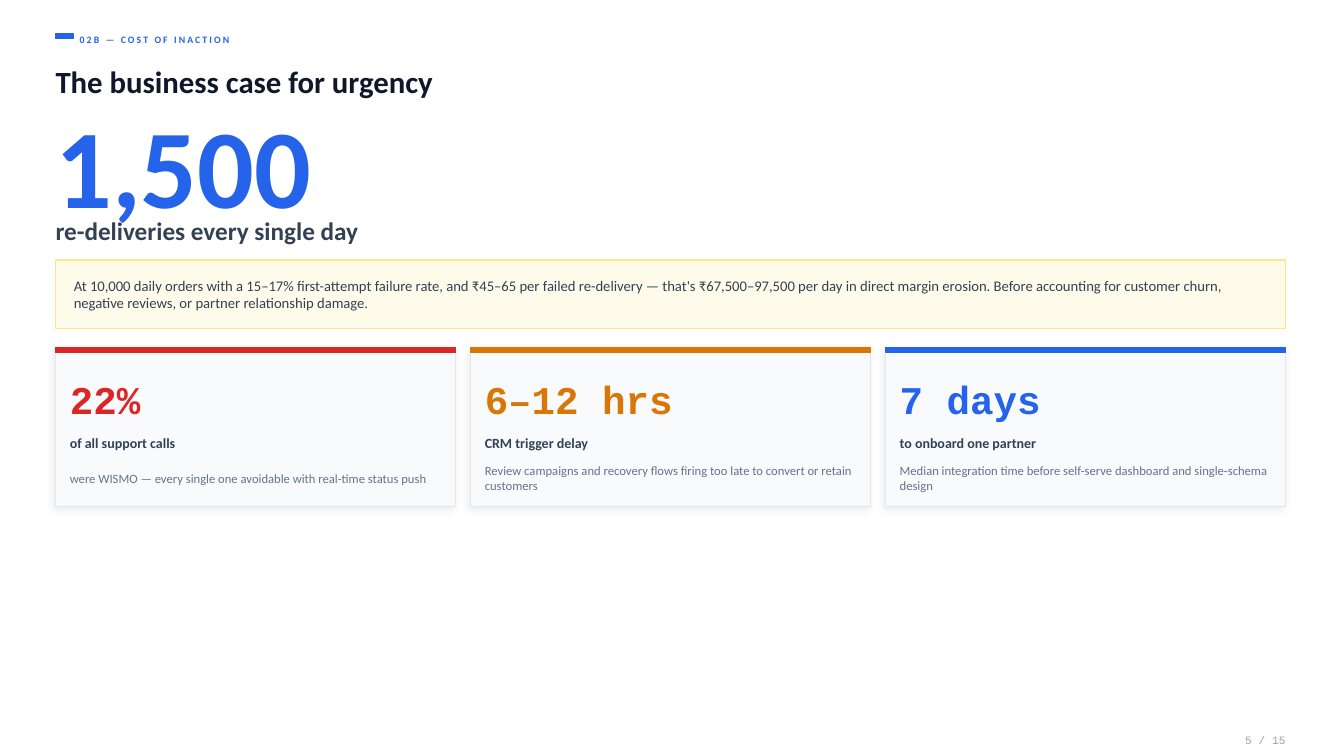
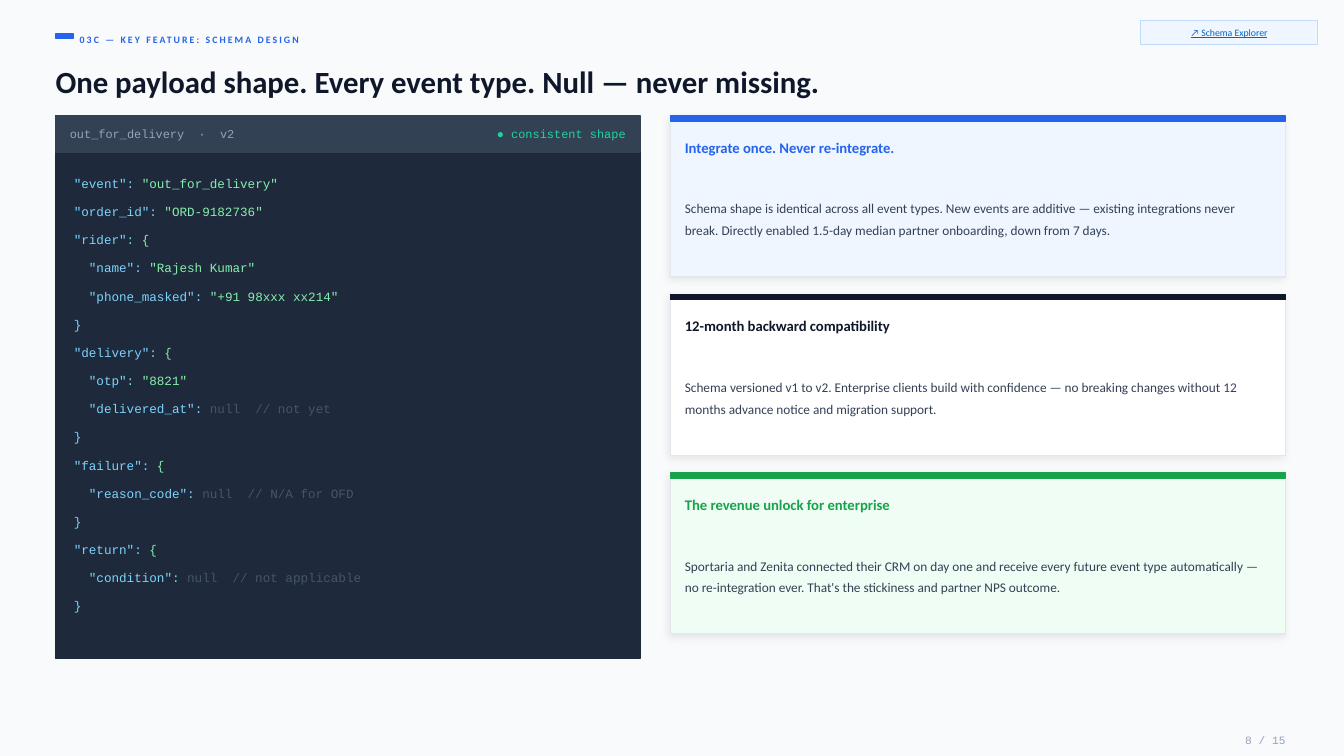
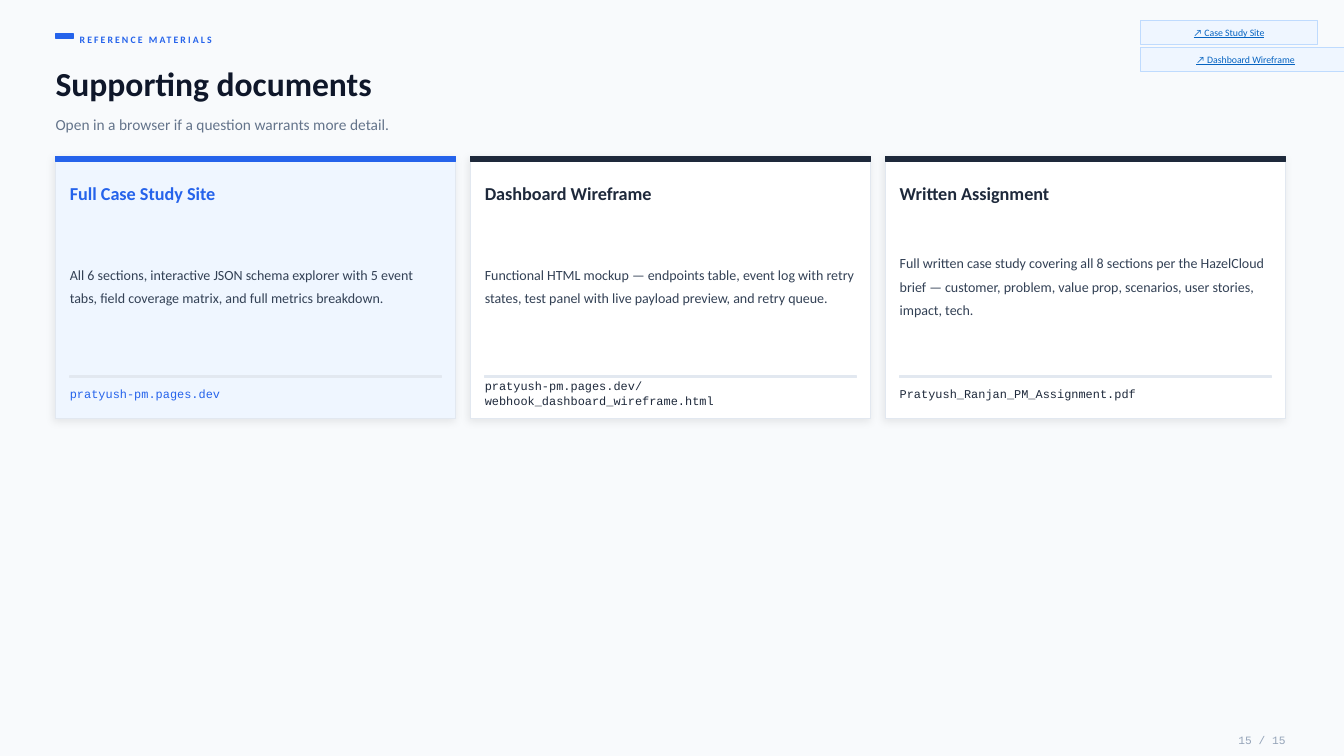
from lxml import etree
from pptx import Presentation
from pptx.dml.color import RGBColor
from pptx.enum import shapes, text
from pptx.oxml import ns
from pptx.util import Cm, Pt

SANS, MONO = "Calibri", "Courier New"
BLUE, RED, AMBER, GREEN = "2563EB", "DC2626", "D97706", "16A34A"
INK, NAVY, SLATE, GREY, MUTED = "0F172A", "1E293B", "334155", "64748B", "94A3B8"
PALE, SKY, WHITE, EDGE = "F8FAFC", "EFF6FF", "FFFFFF", "E2E8F0"
KEY, VALUE, DIM = "7DD3FC", "86EFAC", "475569"
LEFT, WIDE, GAP, PAD = 1.4, 31, 0.37, 0.36
TOTAL = 15

STATS = [
    (RED, "22%", "of all support calls",
     "were WISMO — every single one avoidable with real-time status push"),
    (AMBER, "6–12 hrs", "CRM trigger delay",
     "Review campaigns and recovery flows firing too late to convert or retain customers"),
    (BLUE, "7 days", "to onboard one partner",
     "Median integration time before self-serve dashboard and single-schema design"),
]
NOTE = ("At 10,000 daily orders with a 15–17% first-attempt failure rate, and ₹45–65 per failed "
        "re-delivery — that's ₹67,500–97,500 per day in direct margin erosion. Before accounting "
        "for customer churn, negative reviews, or partner relationship damage.")
CODE = [
    ('"event": ', '"out_for_delivery"'),
    ('"order_id": ', '"ORD-9182736"'),
    ('"rider": ', "{"),
    ('  "name": ', '"Rajesh Kumar"'),
    ('  "phone_masked": ', '"+91 98xxx xx214"'),
    ("}", ""),
    ('"delivery": ', "{"),
    ('  "otp": ', '"8821"'),
    ('  "delivered_at": ', "null  // not yet"),
    ("}", ""),
    ('"failure": ', "{"),
    ('  "reason_code": ', "null  // N/A for OFD"),
    ("}", ""),
    ('"return": ', "{"),
    ('  "condition": ', "null  // not applicable"),
    ("}", ""),
]
GAINS = [
    (SKY, BLUE, "Integrate once. Never re-integrate.",
     "Schema shape is identical across all event types. New events are additive — existing "
     "integrations never break. Directly enabled 1.5-day median partner onboarding, down from 7 days."),
    (WHITE, INK, "12-month backward compatibility",
     "Schema versioned v1 to v2. Enterprise clients build with confidence — no breaking changes "
     "without 12 months advance notice and migration support."),
    ("F0FDF4", GREEN, "The revenue unlock for enterprise",
     "Sportaria and Zenita connected their CRM on day one and receive every future event type "
     "automatically — no re-integration ever. That's the stickiness and partner NPS outcome."),
]
DOCS = [
    (SKY, BLUE, "Full Case Study Site",
     "All 6 sections, interactive JSON schema explorer with 5 event tabs, field coverage matrix, "
     "and full metrics breakdown.",
     "pratyush-pm.pages.dev"),
    (WHITE, NAVY, "Dashboard Wireframe",
     "Functional HTML mockup — endpoints table, event log with retry states, test panel with live "
     "payload preview, and retry queue.",
     "pratyush-pm.pages.dev/webhook_dashboard_wireframe.html"),
    (WHITE, NAVY, "Written Assignment",
     "Full written case study covering all 8 sections per the HazelCloud brief — customer, problem, "
     "value prop, scenarios, user stories, impact, tech.",
     "Pratyush_Ranjan_PM_Assignment.pdf"),
]


def rgb(code):
    return RGBColor.from_string(code)


def write(shape, runs, size, font=SANS, bold=False, align="LEFT", lead=None,
          inset=(0, 0), track=None, under=None):
    frame = shape.text_frame
    frame.word_wrap = True
    frame.auto_size = text.MSO_AUTO_SIZE.NONE
    frame.vertical_anchor = text.MSO_ANCHOR.MIDDLE
    frame.margin_left = frame.margin_right = Cm(inset[0])
    frame.margin_top = frame.margin_bottom = Cm(inset[1])
    para = frame.paragraphs[0]
    para.alignment = text.PP_ALIGN[align]
    if lead:
        para.line_spacing = lead
    for words, color in runs:
        run = para.add_run()
        run.text = words
        run.font.name, run.font.size = font, Pt(size)
        run.font.bold, run.font.underline = bold, under
        run.font.color.rgb = rgb(color)
        if track:
            run.font._element.set("spc", str(track))


def label(slide, x, y, w, h, words, size, color, **style):
    box = slide.shapes.add_textbox(Cm(x), Cm(y), Cm(w), Cm(h))
    write(box, [(words, color)], size, **style)


def block(slide, x, y, w, h, fill, line=None, weight=1):
    shape = slide.shapes.add_shape(shapes.MSO_SHAPE.RECTANGLE, Cm(x), Cm(y), Cm(w), Cm(h))
    shape.shadow.inherit = False
    shape.fill.solid()
    shape.fill.fore_color.rgb = rgb(fill)
    shape.line.color.rgb = rgb(line or fill)
    shape.line.width = Pt(weight)
    return shape


def shade(shape):
    effects = shape._element.spPr.find(ns.qn("a:effectLst"))
    outer = etree.SubElement(effects, ns.qn("a:outerShdw"), blurRad="76200", dist="25400",
                             dir="8100000", algn="bl", rotWithShape="0")
    color = etree.SubElement(outer, ns.qn("a:srgbClr"), val="000000")
    etree.SubElement(color, ns.qn("a:alpha"), val="8000")


def card(slide, x, y, w, h, fill, accent, parts):
    shade(block(slide, x, y, w, h, fill, EDGE))
    block(slide, x, y, w, 0.13, accent)
    for down, high, words, size, color, style in parts:
        label(slide, x + PAD, y + down, w - 2 * PAD, high, words, size, color, **style)


def columns(count):
    w = (WIDE - GAP * (count - 1)) / count
    return [(LEFT + i * (w + GAP), w) for i in range(count)]


def start(deck, page, tag, title, back=PALE, size=22, high=1.17):
    slide = deck.slides.add_slide(deck.slide_layouts[5])
    slide.background.fill.solid()
    slide.background.fill.fore_color.rgb = rgb(back)
    block(slide, LEFT, 0.86, 0.46, 0.1, BLUE)
    label(slide, 2.01, 0.76, 30.38, 0.46, tag, 7, BLUE, bold=True, track=150)
    head = slide.shapes.title
    head.left, head.top, head.width, head.height = Cm(LEFT), Cm(1.47), Cm(WIDE), Cm(high)
    write(head, [(title, INK)], size, bold=True)
    label(slide, LEFT + WIDE - 1.52, 18.41, 1.52, 0.46, f"{page} / {TOTAL}", 8, MUTED,
          font=MONO, align="RIGHT")
    return slide


def chips(slide, items):
    for i, (words, w) in enumerate(items):
        chip = block(slide, 28.75, 0.51 + 0.69 * i, w, 0.61, SKY, "BFDBFE", 0.75)
        write(chip, [(words, "0563C1")], 7, align="CENTER", inset=(0.25, 0.13), under=True)


def urgency(deck):
    slide = start(deck, 5, "02B — COST OF INACTION", "The business case for urgency", WHITE)
    label(slide, LEFT, 2.74, 12.7, 2.79, "1,500", 80, BLUE, bold=True)
    label(slide, LEFT, 5.33, 15.24, 0.97, "re-deliveries every single day", 18, SLATE, bold=True)
    note = block(slide, LEFT, 6.55, WIDE, 1.73, "FFFBEB", "FDE68A")
    write(note, [(NOTE, SLATE)], 10.5, inset=(0.46, 0.2))
    for (x, w), (color, stat, name, more) in zip(columns(3), STATS):
        card(slide, x, 8.76, w, 4.01, PALE, color, [
            (0.56, 1.47, stat, 28, color, dict(font=MONO, bold=True)),
            (2.09, 0.61, name, 10, SLATE, dict(bold=True)),
            (2.75, 1.07, more, 9, GREY, {}),
        ])


def schema(deck):
    slide = start(deck, 8, "03C — KEY FEATURE: SCHEMA DESIGN",
                  "One payload shape. Every event type. Null — never missing.")
    top, wide = 2.92, 14.73
    block(slide, LEFT, top, wide, 13.67, NAVY)
    block(slide, LEFT, top, wide, 0.91, SLATE)
    label(slide, LEFT + PAD, 3.1, 7.11, 0.56, "out_for_delivery  ·  v2", 8.5, MUTED, font=MONO)
    label(slide, LEFT + wide - PAD - 3.71, 3.1, 3.71, 0.56, "● consistent shape", 8.5, "22D3A0",
          font=MONO, align="RIGHT")
    for i, (key, value) in enumerate(CODE):
        box = slide.shapes.add_textbox(Cm(1.86), Cm(4.29 + 0.71 * i), Cm(13.82), Cm(0.66))
        runs = [(key, KEY)]
        if value:
            runs.append((value, DIM if value.startswith("null") else VALUE))
        write(box, runs, 9, font=MONO)
    for i, (fill, color, name, more) in enumerate(GAINS):
        card(slide, 16.9, top + 4.5 * i, 15.5, 4.06, fill, color, [
            (0.46, 0.66, name, 10.5, color, dict(bold=True)),
            (1.27, 2.54, more, 9.5, SLATE, dict(lead=1.35)),
        ])
    chips(slide, [("↗ Schema Explorer", 4.45)])


def papers(deck):
    slide = start(deck, 15, "REFERENCE MATERIALS", "Supporting documents", size=24, high=1.27)
    label(slide, LEFT, 2.79, WIDE, 0.71,
          "Open in a browser if a question warrants more detail.", 11, GREY)
    top = 3.94
    for (x, w), (fill, color, name, more, link) in zip(columns(3), DOCS):
        card(slide, x, top, w, 6.6, fill, color, [
            (0.56, 0.76, name, 13, color, dict(bold=True)),
            (1.57, 3.25, more, 10, SLATE, dict(lead=1.4)),
            (5.69, 0.56, link, 8.5, color, dict(font=MONO)),
        ])
        block(slide, x + PAD, top + 5.54, w - 2 * PAD, 0.03, EDGE)
    chips(slide, [("↗ Case Study Site", 4.45), ("↗ Dashboard Wireframe", 5.28)])


def main():
    deck = Presentation()
    deck.slide_width, deck.slide_height = Cm(33.87), Cm(19.05)
    urgency(deck)
    schema(deck)
    papers(deck)
    deck.save("out.pptx")


if __name__ == "__main__":
    main()
